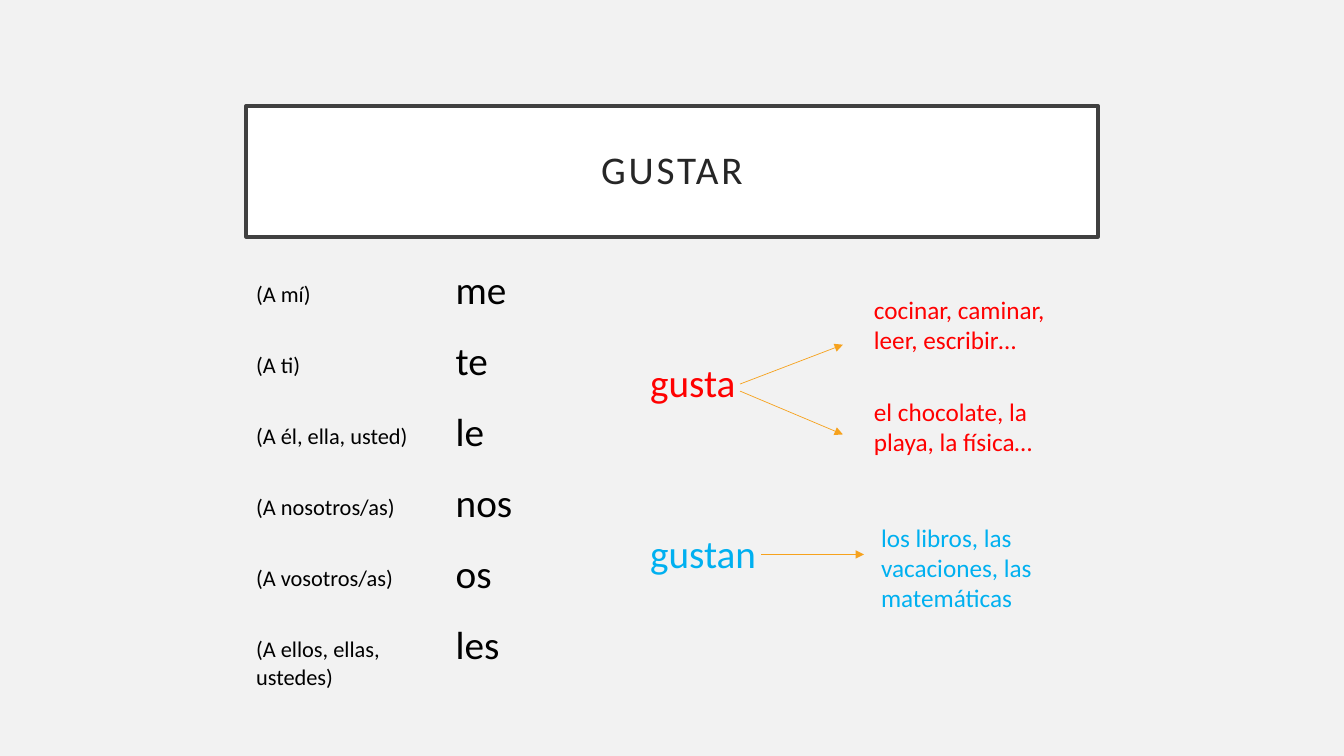
"""Builds a slide on the Spanish verb gustar with its pronouns and agreement."""
from dataclasses import dataclass

from lxml import etree
from pptx import Presentation
from pptx import util as u
from pptx.dml import color
from pptx.enum import shapes, text
from pptx.oxml import ns

FONT = "Calibri"
RED, BLUE, BLACK, ORANGE = "FF0000", "00B0F0", "000000", "F6A21D"
NO_GRID_STYLE = "{2D5ABB26-0587-4C30-8999-92F81FD0307C}"
ROW_HEIGHT = 0.705


@dataclass
class Label:
    words: str
    left: float
    top: float
    width: float
    height: float
    size: int
    colour: str


@dataclass
class Column:
    entries: list[str]
    left: float
    top: float
    width: float
    size: int


@dataclass
class Arrow:
    start: tuple[float, float]
    end: tuple[float, float]


LABELS = [
    Label("gusta", 6.35, 3.51, 1.1, 0.57, 28, RED),
    Label("gustan", 6.35, 5.2, 1.35, 0.57, 28, BLUE),
    Label("cocinar, caminar, leer, escribir…", 8.57, 2.87, 2.04, 0.71, 18, RED),
    Label("el chocolate, la playa, la física…", 8.57, 3.88, 2.04, 0.71, 18, RED),
    Label("los libros, las vacaciones, las matemáticas", 8.64, 5.13, 2.04, 1.01, 18, BLUE),
]
COLUMNS = [
    Column(["me", "te", "le", "nos", "os", "les"], 4.42, 2.6, 1.35, 28),
    Column(
        ["(A mí)", "(A ti)", "(A él, ella, usted)", "(A nosotros/as)",
         "(A vosotros/as)", "(A ellos, ellas, ustedes)"],
        2.44, 2.74, 1.91, 16,
    ),
]
ARROWS = [
    Arrow((7.34, 3.81), (8.36, 3.42)),
    Arrow((7.34, 3.88), (8.36, 4.31)),
    Arrow((7.55, 5.5), (8.57, 5.5)),
]


def rgb(value: str) -> color.RGBColor:
    return color.RGBColor.from_string(value)


def write(frame, words: str, size: int, colour: str):
    frame.text = words
    font = frame.paragraphs[0].runs[0].font
    font.name, font.size = FONT, u.Pt(size)
    font.color.rgb = rgb(colour)
    return frame.paragraphs[0]


def format_title(title) -> None:
    title.left, title.top = u.Inches(2.44), u.Inches(1.05)
    title.width, title.height = u.Inches(8.45), u.Inches(1.3)
    title.fill.solid()
    title.fill.fore_color.rgb = rgb("FFFFFF")
    title.line.color.rgb = rgb("404040")
    title.line.width = u.Pt(2.5)
    frame = title.text_frame
    frame.margin_left = frame.margin_right = u.Inches(0.2)
    frame.margin_top = frame.margin_bottom = u.Inches(0.2)
    frame.vertical_anchor = text.MSO_ANCHOR.MIDDLE
    paragraph = write(frame, "GUSTAR", 28, "262626")
    paragraph.alignment = text.PP_ALIGN.CENTER
    paragraph.line_spacing = 0.9
    paragraph.runs[0].font._element.set("spc", "200")


def add_label(slide, label: Label) -> None:
    box = slide.shapes.add_textbox(
        u.Inches(label.left), u.Inches(label.top), u.Inches(label.width), u.Inches(label.height)
    )
    box.text_frame.word_wrap = True
    box.text_frame.auto_size = text.MSO_AUTO_SIZE.SHAPE_TO_FIT_TEXT
    write(box.text_frame, label.words, label.size, label.colour)


def add_column(slide, column: Column) -> None:
    count = len(column.entries)
    table = slide.shapes.add_table(
        count, 1, u.Inches(column.left), u.Inches(column.top),
        u.Inches(column.width), u.Inches(ROW_HEIGHT * count),
    ).table
    table.first_row = table.horz_banding = False
    table._tbl.tblPr.find(ns.qn("a:tableStyleId")).text = NO_GRID_STYLE
    for row, entry in enumerate(column.entries):
        cell = table.cell(row, 0)
        cell.fill.background()
        write(cell.text_frame, entry, column.size, BLACK)


def add_arrow(slide, arrow: Arrow) -> None:
    connector = slide.shapes.add_connector(
        shapes.MSO_CONNECTOR.STRAIGHT, *map(u.Inches, arrow.start + arrow.end)
    )
    connector.line.color.rgb = rgb(ORANGE)
    connector.line.width = u.Pt(0.5)
    etree.SubElement(connector.line._get_or_add_ln(), ns.qn("a:tailEnd"), type="triangle")
    etree.SubElement(connector._element.spPr, ns.qn("a:effectLst"))


def main() -> None:
    presentation = Presentation()
    presentation.slide_width, presentation.slide_height = u.Inches(13.33), u.Inches(7.5)
    slide = presentation.slides.add_slide(presentation.slide_layouts[5])
    slide.background.fill.solid()
    slide.background.fill.fore_color.rgb = rgb("F2F2F2")
    format_title(slide.shapes.title)
    for label in LABELS:
        add_label(slide, label)
    for column in COLUMNS:
        add_column(slide, column)
    for arrow in ARROWS:
        add_arrow(slide, arrow)
    presentation.save("out.pptx")


if __name__ == "__main__":
    main()
